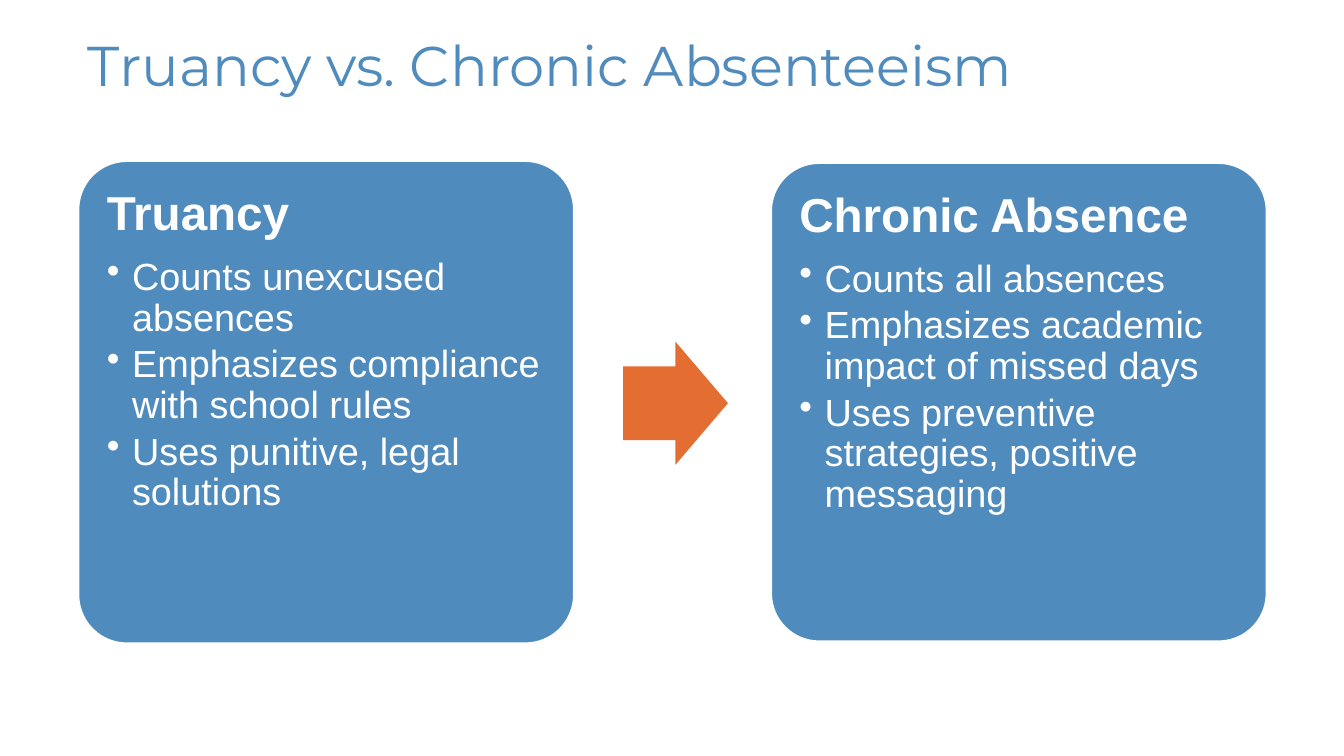
from lxml import etree
from pptx import Presentation
from pptx import util as u
from pptx.dml.color import RGBColor
from pptx.enum import shapes, text
from pptx.oxml.ns import qn

PX = 9144  # 100 px to the inch
BLUE, ORANGE, WHITE = "508BBD", "E46D31", "FFFFFF"


def color(target, value):
    """Give a fill or a font a solid colour."""
    if hasattr(target, "solid"):
        target.solid()
        target.fore_color.rgb = RGBColor.from_string(value)
    else:
        target.color.rgb = RGBColor.from_string(value)


def add_shape(s, kind, box, fill, adjustments):
    sp = s.shapes.add_shape(kind, *(n * PX for n in box))
    sp.shadow.inherit = False
    color(sp.fill, fill)
    for i, value in enumerate(adjustments):
        sp.adjustments[i] = value
    return sp


prs = Presentation()
prs.slide_width, prs.slide_height = 1333 * PX, 750 * PX
s = prs.slides.add_slide(prs.slide_layouts[5])

title = s.shapes.title
title.left, title.top, title.width, title.height = (n * PX for n in (77, 11, 1179, 113))
tf = title.text_frame
tf.text = "Truancy vs. Chronic Absenteeism"
tf.word_wrap = True
tf.auto_size = text.MSO_AUTO_SIZE.NONE
tf.vertical_anchor = text.MSO_ANCHOR.MIDDLE
p = tf.paragraphs[0]
p.alignment = text.PP_ALIGN.LEFT
p.line_spacing = 0.9
font = p.runs[0].font
font.name, font.size = "Montserrat", u.Pt(40)
color(font, BLUE)

cards = [
    ((78, 160, 491, 478), "Truancy", [
        "Counts unexcused absences",
        "Emphasizes compliance with school rules",
        "Uses punitive, legal solutions"]),
    ((765, 162, 491, 474), "Chronic Absence", [
        "Counts all absences",
        "Emphasizes academic impact of missed days",
        "Uses preventive strategies, positive messaging"]),
]
for box, heading, points in cards:
    card = add_shape(s, shapes.MSO_SHAPE.ROUNDED_RECTANGLE, box, BLUE, [0.1])
    color(card.line.fill, WHITE)
    card.line.width = u.Pt(1)
    tf = card.text_frame
    tf.word_wrap = True
    tf.vertical_anchor = text.MSO_ANCHOR.TOP
    tf.margin_left = tf.margin_top = tf.margin_right = tf.margin_bottom = 14 * PX
    tf.text = "\n".join([heading] + points)
    for i, p in enumerate(tf.paragraphs):
        is_heading = i == 0
        p.alignment = text.PP_ALIGN.LEFT
        p.line_spacing = 0.9
        p.space_after = u.Pt(12 if is_heading else 4)
        if not is_heading:
            p.level = 1
            pPr = p._p.get_or_add_pPr()
            pPr.set("marL", str(25 * PX))
            pPr.set("indent", str(-25 * PX))
            etree.SubElement(pPr, qn("a:buChar")).set("char", "•")
        font = p.runs[0].font
        font.name, font.size = "Arial", u.Pt(34 if is_heading else 27)
        font.bold = is_heading
        color(font, WHITE)

arrow = add_shape(s, shapes.MSO_SHAPE.RIGHT_ARROW, (618, 339, 104, 122), ORANGE, [0.6, 0.5])
arrow.line.fill.background()

prs.save("out.pptx")
